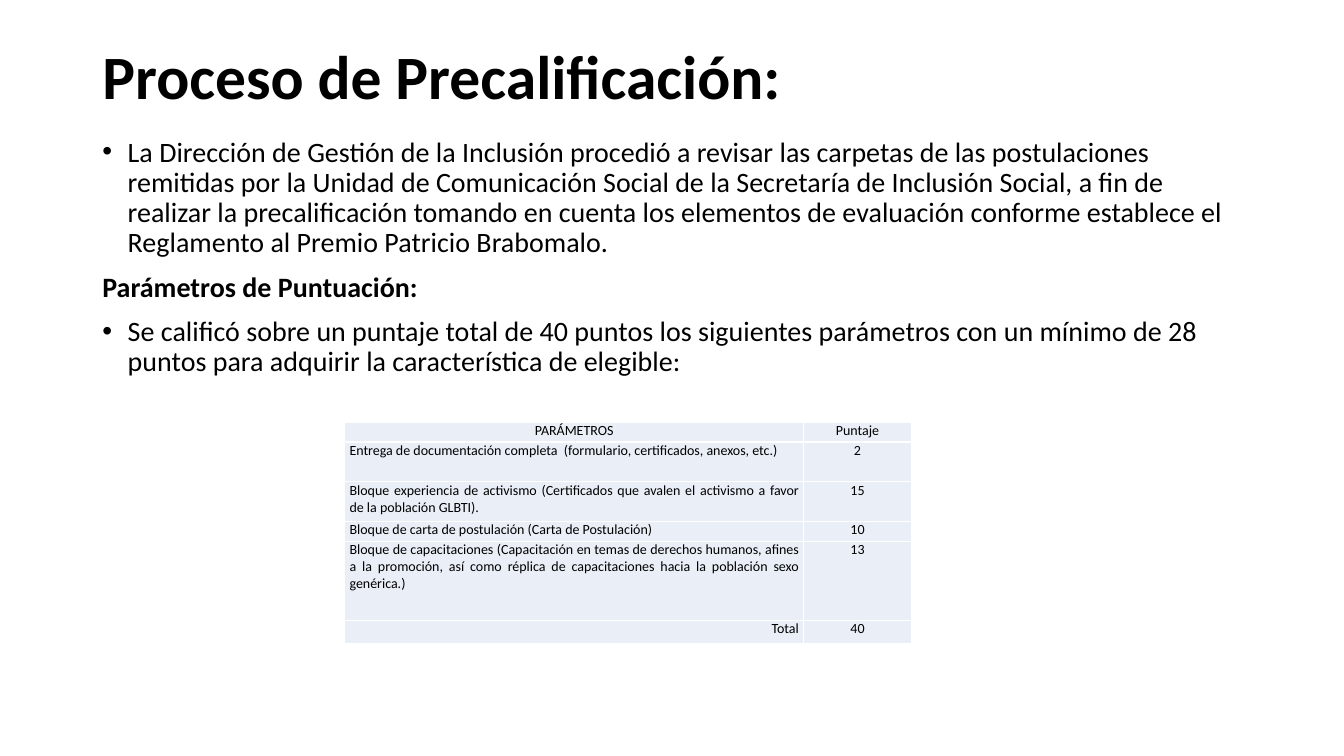
from lxml.etree import SubElement
from pptx import Presentation
from pptx.dml.color import RGBColor
from pptx.enum.text import MSO_ANCHOR as Anchor, PP_ALIGN as Align
from pptx.oxml.ns import qn
from pptx.util import Cm, Pt

BLACK, WHITE, PALE_BLUE = "000000", "FFFFFF", "EAEFF7"
INDENT = Cm(0.64)


def rgb(hex_string):
    return RGBColor.from_string(hex_string)


def write(paragraph, text, size, bold=False, align=Align.LEFT,
          spacing=None, before=0, bullet=False):
    """Fill a paragraph with one formatted run, optionally bulleted."""
    run = paragraph.add_run()
    run.text = text
    run.font.name = "Calibri"
    run.font.size = Pt(size)
    run.font.bold = bold
    run.font.color.rgb = rgb(BLACK)
    paragraph.alignment = align
    paragraph.line_spacing = spacing
    paragraph.space_before = Pt(before)
    if bullet:
        properties = paragraph._p.get_or_add_pPr()
        properties.set("marL", str(INDENT))
        properties.set("indent", str(-INDENT))
        SubElement(properties, qn("a:buFont"), typeface="Arial")
        SubElement(properties, qn("a:buChar"), char="•")


deck = Presentation()
deck.slide_width, deck.slide_height = Cm(33.87), Cm(19.05)
slide = deck.slides.add_slide(deck.slide_layouts[6])

# Heading
heading = slide.shapes.add_textbox(Cm(2.33), Cm(1.02), Cm(29.21), Cm(1.98)).text_frame
heading.word_wrap = True
heading.vertical_anchor = Anchor.MIDDLE
write(heading.paragraphs[0], "Proceso de Precalificación:", 44, bold=True, spacing=0.9)

# Explanation
explanation = [
    ("La Dirección de Gestión de la Inclusión procedió a revisar las carpetas de las "
     "postulaciones remitidas por la Unidad de Comunicación Social de la Secretaría de "
     "Inclusión Social, a fin de realizar la precalificación tomando en cuenta los elementos "
     "de evaluación conforme establece el Reglamento al Premio Patricio Brabomalo.", True),
    ("Parámetros de Puntuación:", False),
    ("Se calificó sobre un puntaje total de 40 puntos los siguientes parámetros con un mínimo "
     "de 28 puntos para adquirir la característica de elegible:", True),
]
body = slide.shapes.add_textbox(Cm(2.33), Cm(3.35), Cm(29.21), Cm(13.46)).text_frame
body.word_wrap = True
for index, (text, is_bullet) in enumerate(explanation):
    paragraph = body.add_paragraph() if index else body.paragraphs[0]
    write(paragraph, text, 20, bold=not is_bullet, spacing=0.9, before=10, bullet=is_bullet)

# Scores: parameter, points, alignment of the parameter, row height in cm
scores = [
    ("PARÁMETROS", "Puntaje", Align.CENTER, 0.5),
    ("Entrega de documentación completa  (formulario, certificados, anexos, etc.)",
     "2", Align.JUSTIFY, 1),
    ("Bloque experiencia de activismo (Certificados que avalen el activismo a favor de la "
     "población GLBTI).", "15", Align.JUSTIFY, 1),
    ("Bloque de carta de postulación (Carta de Postulación)", "10", Align.JUSTIFY, 0.5),
    ("Bloque de capacitaciones (Capacitación en temas de derechos humanos, afines a la "
     "promoción, así como réplica de capacitaciones hacia la población sexo genérica.)",
     "13", Align.JUSTIFY, 2),
    ("Total", "40", Align.RIGHT, 0.58),
]
score_table = slide.shapes.add_table(
    len(scores), 2, Cm(8.69), Cm(10.64), Cm(14.28), Cm(5.58)).table
score_table.columns[0].width = Cm(11.56)
score_table.columns[1].width = Cm(2.72)

for row, (parameter, points, parameter_align, height) in enumerate(scores):
    score_table.rows[row].height = Cm(height)
    for column, (text, align) in enumerate([(parameter, parameter_align),
                                            (points, Align.CENTER)]):
        cell = score_table.cell(row, column)
        cell.margin_left = cell.margin_right = Cm(0.12)
        cell.margin_top = cell.margin_bottom = 0
        write(cell.text_frame.paragraphs[0], text, 10, align=align)
        cell_properties = cell._tc.get_or_add_tcPr()
        for side in ("a:lnL", "a:lnR", "a:lnT", "a:lnB"):
            border = SubElement(cell_properties, qn(side), w=str(Pt(1)))
            border_fill = SubElement(border, qn("a:solidFill"))
            SubElement(border_fill, qn("a:srgbClr"), val=WHITE)
        cell.fill.solid()
        cell.fill.fore_color.rgb = rgb(PALE_BLUE)

deck.save("out.pptx")
